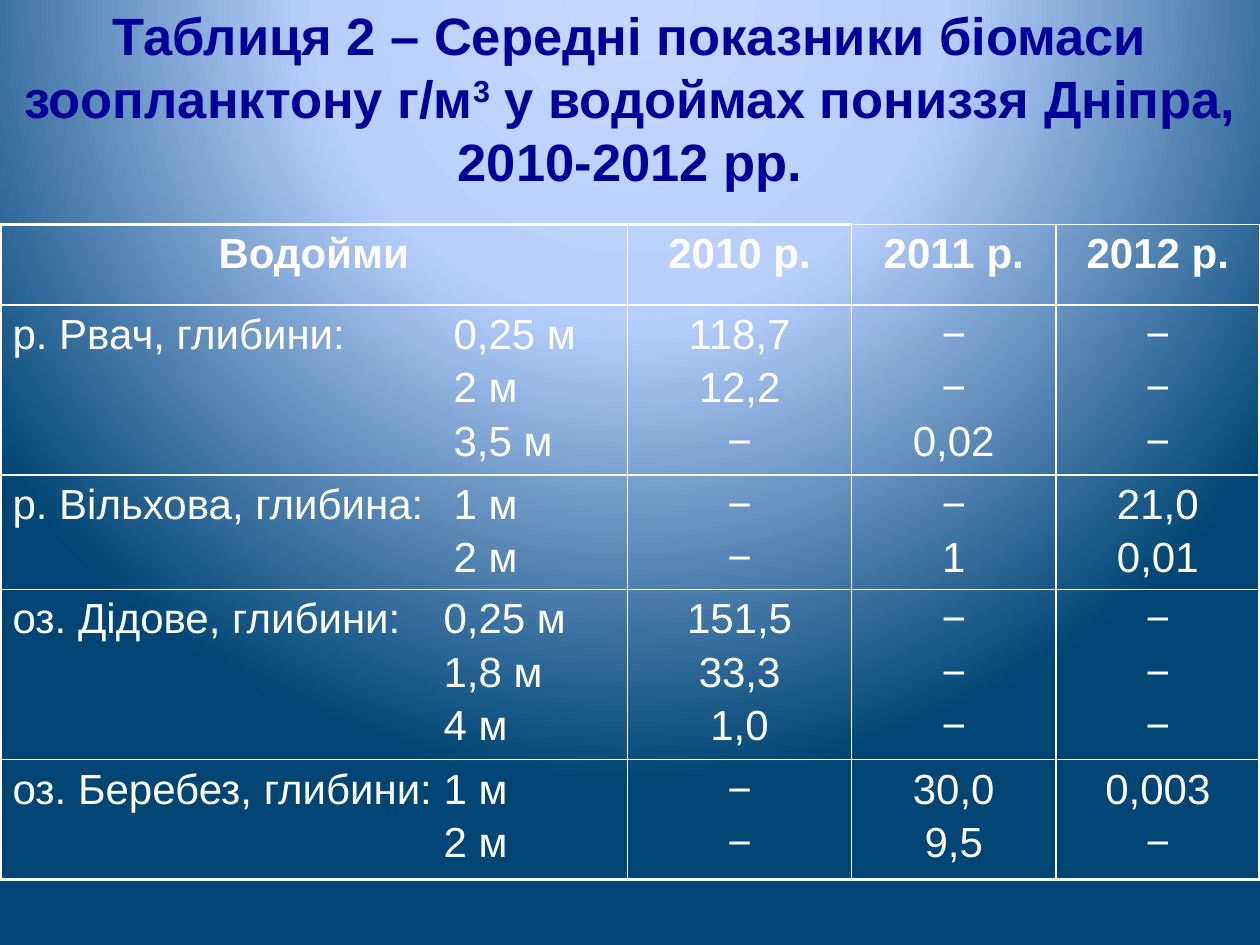
"""Build the zooplankton biomass table slide."""
import pptx
import pptx.enum.text
import pptx.oxml
import pptx.oxml.ns
import pptx.util
from pptx.dml.color import RGBColor
from pptx.util import Inches

COLORS = {"title": "000099", "light": "FFFFFF", "glow": "C3D7FF", "sky": "B9D0FF", "sea": "004573"}
ALIGN = pptx.enum.text.PP_ALIGN
ANCHOR = pptx.enum.text.MSO_ANCHOR
COLUMNS = [4.98, 1.78, 1.62, 1.62]
HEIGHTS = [0.64, 1.35, 0.91, 1.35, 0.95]
DEPTH_STOPS = [0, 3.5, 3.5, 3.42, 3.42]
ROWS = [
    [["Водойми"], ["2010 р."], ["2011 р."], ["2012 р."]],
    [["р. Рвач, глибини:\t0,25 м", "\t2 м", "\t3,5 м"],
     ["118,7", "12,2", "−"], ["−", "−", "0,02"], ["−", "−", "−"]],
    [["р. Вільхова, глибина:\t1 м", "\t2 м"], ["−", "−"], ["−", "1"], ["21,0", "0,01"]],
    [["оз. Дідове, глибини:\t0,25 м", "\t1,8 м", "\t4 м"],
     ["151,5", "33,3", "1,0"], ["−", "−", "−"], ["−", "−", "−"]],
    [["оз. Беребез, глибини:\t1 м", "\t2 м"], ["−", "−"], ["30,0", "9,5"], ["0,003", "−"]],
]


def xml(tag, content="", attributes=""):
    return pptx.oxml.parse_xml(
        f'<a:{tag} {pptx.oxml.ns.nsdecls("a")} {attributes}>{content}</a:{tag}>')


def add_text(para, text, size=24, color="light", bold=False, baseline=0):
    span = para.add_run()
    span.text = text
    span.font.name = "Arial"
    span.font.size = pptx.util.Pt(size)
    span.font.bold = bold
    span.font.color.rgb = RGBColor.from_string(COLORS[color])
    if baseline:
        span._r.get_or_add_rPr().set("baseline", str(baseline * 1000))


def set_background(page):
    fill = page.background.fill
    fill.solid()
    stops = "".join(
        f'<a:gs pos="{position * 1000}"><a:srgbClr val="{COLORS[name]}"/></a:gs>'
        for position, name in [(0, "glow"), (40, "sky"), (100, "sea")])
    gradient = xml("gradFill", f'<a:gsLst>{stops}</a:gsLst><a:path path="circle">'
                   '<a:fillToRect l="50000" t="-80000" r="50000" b="180000"/></a:path>',
                   'rotWithShape="1"')
    solid = page._element.find(".//" + pptx.oxml.ns.qn("a:solidFill"))
    solid.getparent().replace(solid, gradient)


def set_title(page):
    title = page.shapes.title
    title.left, title.top, title.width, title.height = map(Inches, (0, 0, 10, 1.55))
    frame = title.text_frame
    frame.auto_size = pptx.enum.text.MSO_AUTO_SIZE.NONE
    frame.word_wrap = True
    frame.vertical_anchor = ANCHOR.MIDDLE
    para = frame.paragraphs[0]
    para.alignment = ALIGN.CENTER
    style = {"size": 30, "color": "title", "bold": True}
    add_text(para, "Таблиця 2 – Середні показники біомаси зоопланктону г/м", **style)
    add_text(para, "3", baseline=30, **style)
    add_text(para, " у водоймах пониззя Дніпра, 2010-2012 рр.", **style)


def set_borders(cell, row, column):
    thick = {"L": column == 0, "R": column == len(COLUMNS) - 1 and row > 0,
             "T": row == 0 and column < 2, "B": row == len(ROWS) - 1}
    properties = cell._tc.get_or_add_tcPr()
    for index, (side, heavy) in enumerate(thick.items()):
        width = pptx.util.Pt(2.25 if heavy else 1)
        line = xml(f"ln{side}", f'<a:solidFill><a:srgbClr val="{COLORS["light"]}"/></a:solidFill>',
                   f'w="{int(width)}"')
        properties.insert(index, line)


def fill_cell(cell, lines, row, column):
    cell.fill.background()
    cell.vertical_anchor = ANCHOR.TOP
    frame = cell.text_frame
    for index, text in enumerate(lines):
        para = frame.add_paragraph() if index else frame.paragraphs[0]
        if index:
            para.space_before = pptx.util.Pt(3.8)
        para.alignment = ALIGN.CENTER if row == 0 or column else ALIGN.LEFT
        if "\t" in text:
            stop = f'<a:tab pos="{int(Inches(DEPTH_STOPS[row]))}" algn="l"/>'
            para._p.get_or_add_pPr().append(xml("tabLst", stop))
        add_text(para, text, bold=row == 0)
    set_borders(cell, row, column)


def add_biomass_table(page):
    frame = page.shapes.add_table(len(ROWS), len(COLUMNS), Inches(0), Inches(1.78),
                                  Inches(sum(COLUMNS)), Inches(sum(HEIGHTS)))
    table = frame.table
    table.first_row = table.horz_banding = False
    for column, width in zip(table.columns, COLUMNS):
        column.width = Inches(width)
    for row, (height, cells) in enumerate(zip(HEIGHTS, ROWS)):
        table.rows[row].height = Inches(height)
        for column, lines in enumerate(cells):
            fill_cell(table.cell(row, column), lines, row, column)


def main():
    deck = pptx.Presentation()
    deck.slide_width, deck.slide_height = Inches(10), Inches(7.5)
    page = deck.slides.add_slide(deck.slide_layouts[5])
    set_background(page)
    set_title(page)
    add_biomass_table(page)
    deck.save("out.pptx")


if __name__ == "__main__":
    main()
